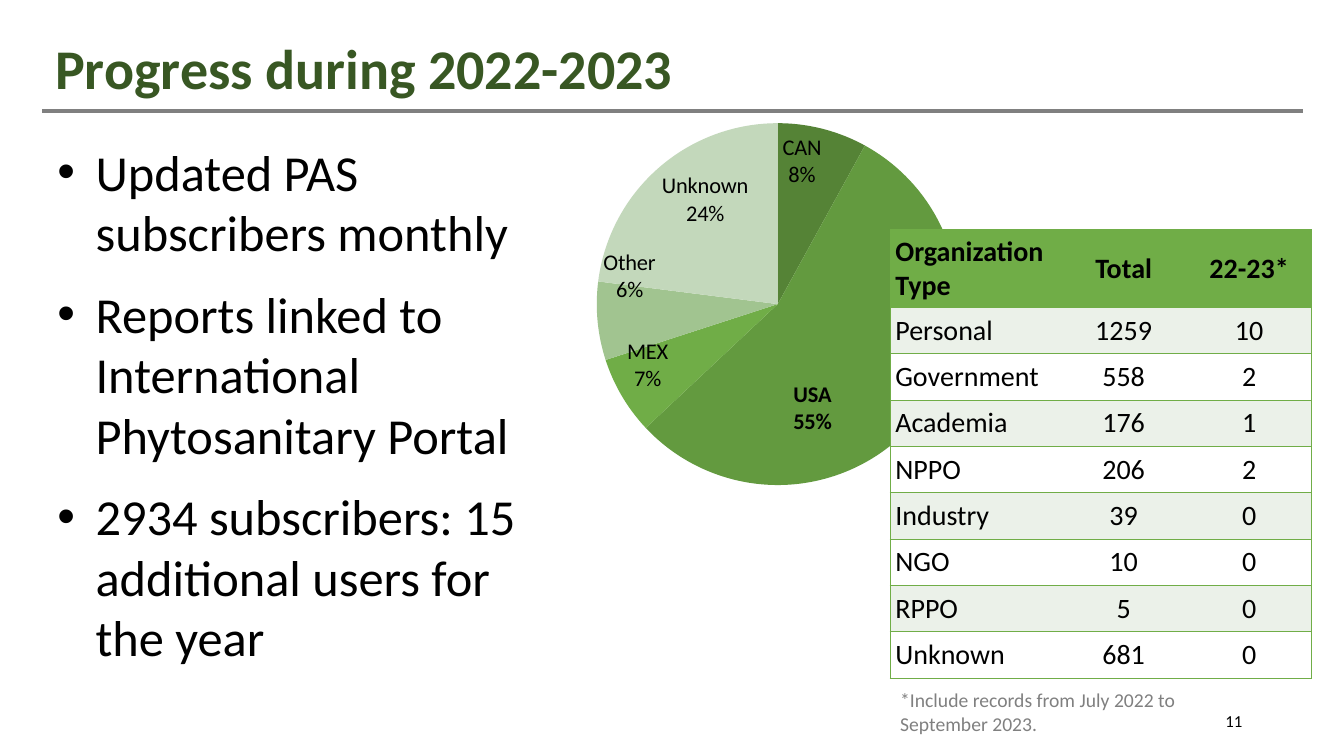
from lxml import etree
from pptx import Presentation
from pptx.chart.data import CategoryChartData
from pptx.dml.color import RGBColor
from pptx.enum.chart import XL_CHART_TYPE, XL_LABEL_POSITION
from pptx.enum.shapes import MSO_CONNECTOR
from pptx.enum.text import MSO_ANCHOR, PP_ALIGN
from pptx.oxml.ns import qn
from pptx.util import Inches, Pt

LEFT, CENTER, RIGHT = PP_ALIGN.LEFT, PP_ALIGN.CENTER, PP_ALIGN.RIGHT
TOP, MIDDLE = MSO_ANCHOR.TOP, MSO_ANCHOR.MIDDLE
STRAIGHT = MSO_CONNECTOR.STRAIGHT
PIE = XL_CHART_TYPE.PIE
INSIDE_END = XL_LABEL_POSITION.INSIDE_END

FONT = "Calibri"
COLORS = {
    "text": "000000", "title": "385723", "gray": "808080",
    "green": "70AD47", "band": "EBF1E9", "white": "FFFFFF",
}
BULLETS = [
    "Updated PAS subscribers monthly",
    "Reports linked to International Phytosanitary Portal",
    "2934 subscribers: 15 additional users for the year",
]
# country, value, label, slice colour, label shift as a share of the chart
COUNTRIES = [
    ("CAN", 8, "8%", "558336", (0, 0)),
    ("USA", 55, "55%", "639A3F", (-0.2, 0.06)),
    ("MEX", 7, "7%", "70AD47", (0, 0)),
    ("Other", 7, "6%", "A1C490", (0, -0.04)),
    ("Unknown", 23, "24%", "C3D8BB", (0, 0)),
]
ORGANIZATIONS = [
    ("Organization Type", "Total", "22-23*"),
    ("Personal", "1259", "10"),
    ("Government", "558", "2"),
    ("Academia", "176", "1"),
    ("NPPO", "206", "2"),
    ("Industry", "39", "0"),
    ("NGO", "10", "0"),
    ("RPPO", "5", "0"),
    ("Unknown", "681", "0"),
]


def rgb(name):
    return RGBColor.from_string(COLORS[name])


def style_font(font, size, color="text", bold=False):
    for key, value in {"name": FONT, "size": Pt(size), "bold": bold}.items():
        setattr(font, key, value)
    font.color.rgb = rgb(color)


def add_text(slide, box, lines, size, color="text", bold=False, align=LEFT, anchor=TOP):
    tf = slide.shapes.add_textbox(*map(Inches, box)).text_frame
    tf.word_wrap = True
    tf.vertical_anchor = anchor
    tf.text = "\n".join(lines)
    for p in tf.paragraphs:
        p.alignment = align
        style_font(p.runs[0].font, size, color, bold)
    return tf


def add_title(slide, box, text):
    tf = add_text(slide, box, [text], 40, "title", True, anchor=MIDDLE)
    tf.paragraphs[0].line_spacing = 0.9


def add_rule(slide, x, y, width):
    line = slide.shapes.add_connector(
        STRAIGHT, Inches(x), Inches(y), Inches(x + width), Inches(y))
    line.line.color.rgb = rgb("gray")
    line.line.width = Pt(3)
    etree.SubElement(line._element.spPr, qn("a:effectLst"))


def add_bullets(slide, box, lines):
    tf = add_text(slide, box, lines, 36)
    for p in tf.paragraphs:
        p.space_after = Pt(15)
        pPr = p._p.get_or_add_pPr()
        pPr.set("marL", str(Inches(0.38)))
        pPr.set("indent", str(Inches(-0.38)))
        etree.SubElement(pPr, qn("a:buFont")).set("typeface", "Arial")
        etree.SubElement(pPr, qn("a:buChar")).set("char", "•")


def set_layout(layout, **values):
    """Fill a chart layout element with manual placement values."""
    manual = etree.SubElement(layout, qn("c:manualLayout"))
    for key, value in values.items():
        etree.SubElement(manual, qn("c:" + key)).set("val", str(value))


def add_country_pie(slide, box):
    data = CategoryChartData()
    data.categories = [country[0] for country in COUNTRIES]
    data.add_series("Series 1", [country[1] for country in COUNTRIES])
    chart = slide.shapes.add_chart(PIE, *map(Inches, box), data).chart
    chart.has_legend = chart.has_title = False
    style_font(chart.font, 10)
    plot = chart.plots[0]
    plot.vary_by_categories = True

    # Pie area inside the chart frame
    area = chart._chartSpace.chart.plotArea
    for old in area.findall(qn("c:layout")):
        area.remove(old)
    layout = etree.Element(qn("c:layout"))
    area.insert(0, layout)
    set_layout(layout, layoutTarget="inner", xMode="edge", yMode="edge",
               x=0.04, y=0.03, w=0.86, h=0.88)

    # Slices and their labels
    for i, (name, _, share, color, shift) in enumerate(COUNTRIES):
        point = plot.series[0].points[i]
        point.format.fill.solid()
        point.format.fill.fore_color.rgb = RGBColor.from_string(color)
        label = point.data_label
        label.text_frame.text = f"{name}\n{share}"
        for p in label.text_frame.paragraphs:
            style_font(p.runs[0].font, 16, bold=name == "USA")
        label.position = INSIDE_END
        if any(shift):
            idx = label._dLbl.find(qn("c:idx"))
            layout = etree.Element(qn("c:layout"))
            idx.addnext(layout)
            set_layout(layout, x=shift[0], y=shift[1])


def set_borders(cell, first, last):
    """Green rules above and below, and on the outer sides of the table."""
    tcPr = cell._tc.get_or_add_tcPr()
    for side, shown in {"L": first, "R": last, "T": True, "B": True}.items():
        ln = etree.SubElement(tcPr, qn("a:ln" + side), w=str(Pt(1)))
        if shown:
            fill = etree.SubElement(ln, qn("a:solidFill"))
            etree.SubElement(fill, qn("a:srgbClr")).set("val", COLORS["green"])
        else:
            etree.SubElement(ln, qn("a:noFill"))


def add_organization_table(slide, box):
    widths = (1.69, 1.25, 1.24)
    rows, cols = len(ORGANIZATIONS), len(widths)
    table = slide.shapes.add_table(rows, cols, *map(Inches, box)).table
    for col, width in zip(table.columns, widths):
        col.width = Inches(width)
    header = 0.77
    for r, values in enumerate(ORGANIZATIONS):
        table.rows[r].height = Inches(header if r == 0 else (box[3] - header) / (rows - 1))
        for c, value in enumerate(values):
            cell = table.cell(r, c)
            for side in ("left", "right", "top", "bottom"):
                setattr(cell, "margin_" + side, Inches(0.05))
            cell.vertical_anchor = MIDDLE
            set_borders(cell, c == 0, c == cols - 1)
            cell.fill.solid()
            cell.fill.fore_color.rgb = rgb(
                "green" if r == 0 else "band" if r % 2 else "white")
            cell.text = value
            p = cell.text_frame.paragraphs[0]
            p.alignment = CENTER if c else LEFT
            style_font(p.runs[0].font, 20, bold=r == 0)


def main():
    prs = Presentation()
    prs.slide_width, prs.slide_height = Inches(13.33), Inches(7.5)
    slide = prs.slides.add_slide(prs.slide_layouts[6])

    # Page number, bullets, heading and footnote
    add_text(slide, (9.42, 6.95, 3, 0.4), ["11"], 12, align=RIGHT, anchor=MIDDLE)
    add_bullets(slide, (0.47, 1.35, 4.86, 5.8), BULLETS)
    add_title(slide, (0.45, 0.08, 9, 1.25), "Progress during 2022-2023")
    add_rule(slide, 0.42, 1.1, 12.5)
    add_text(slide, (8.83, 6.78, 3.17, 0.57),
             ["*Include records from July 2022 to September 2023."], 14, "gray")

    # Subscriber figures, with the table over the pie
    add_country_pie(slide, (5.75, 1.1, 4.18, 4.08))
    add_organization_table(slide, (8.83, 2.28, 4.18, 4.45))
    prs.save("out.pptx")


if __name__ == "__main__":
    main()
